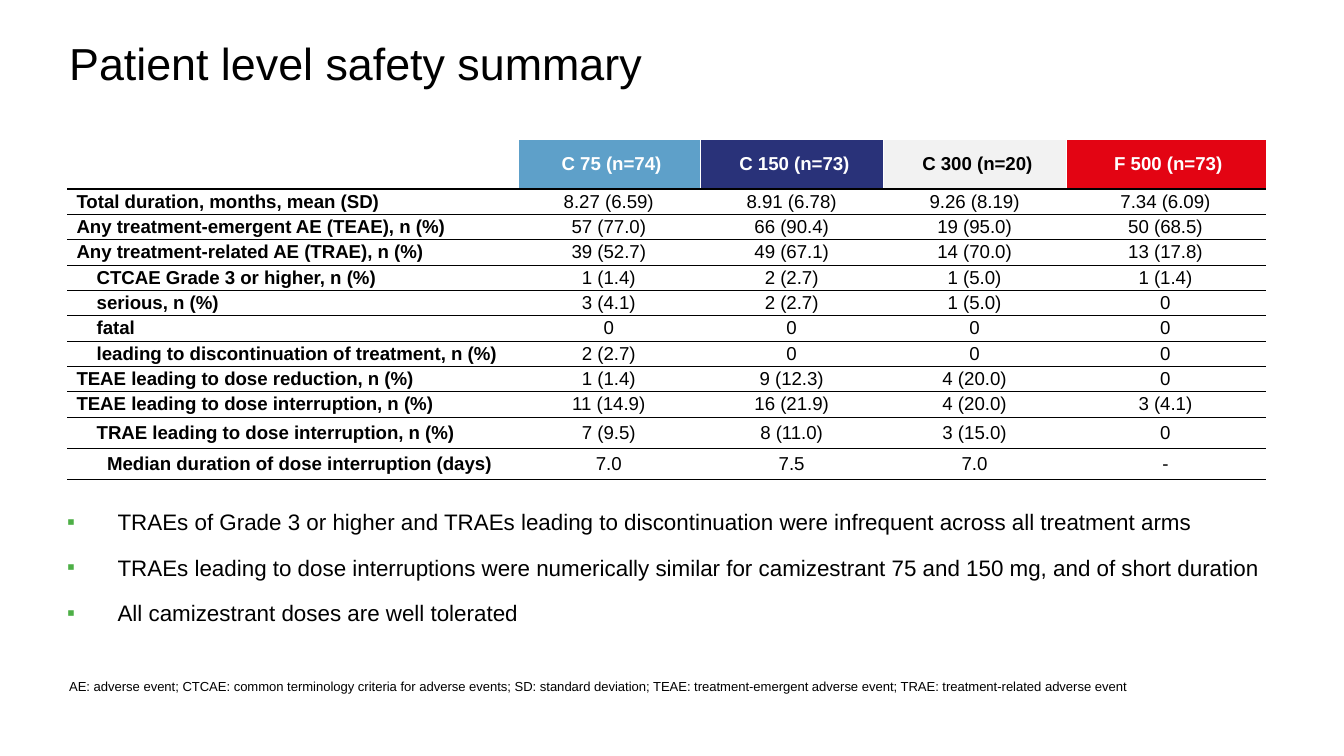
from dataclasses import dataclass

from lxml import etree
from pptx import Presentation
from pptx.dml.color import RGBColor
from pptx.enum.text import MSO_ANCHOR, PP_ALIGN
from pptx.oxml.ns import qn
from pptx.util import Pt

TOP, MIDDLE, BOTTOM = MSO_ANCHOR.TOP, MSO_ANCHOR.MIDDLE, MSO_ANCHOR.BOTTOM
LEFT, CENTER = PP_ALIGN.LEFT, PP_ALIGN.CENTER
NO_GRID_STYLE = "{2D5ABB26-0587-4C30-8999-92F81FD0307C}"


@dataclass(frozen=True)
class Theme:
    font: str = "Arial"
    black: str = "000000"
    white: str = "FFFFFF"
    bullet: str = "4DAF46"
    arm_75: str = "5EA0C9"
    arm_150: str = "293279"
    arm_300: str = "F2F2F2"
    arm_500: str = "E30413"
    title: float = 24
    body: float = 12
    table: float = 10
    footnote: float = 7
    hairline: float = 0.5
    divider: float = 0.75
    header_rule: float = 1


THEME = Theme()

ARMS = [
    ("C 75 (n=74)", THEME.arm_75, THEME.white),
    ("C 150 (n=73)", THEME.arm_150, THEME.white),
    ("C 300 (n=20)", THEME.arm_300, THEME.black),
    ("F 500 (n=73)", THEME.arm_500, THEME.white),
]
LABEL_INSETS = (5, 15.8, 21.4)
SAFETY_ROWS = [
    (0, "Total duration, months, mean (SD)", "8.27 (6.59)", "8.91 (6.78)", "9.26 (8.19)", "7.34 (6.09)"),
    (0, "Any treatment-emergent AE (TEAE), n (%)", "57 (77.0)", "66 (90.4)", "19 (95.0)", "50 (68.5)"),
    (0, "Any treatment-related AE (TRAE), n (%)", "39 (52.7)", "49 (67.1)", "14 (70.0)", "13 (17.8)"),
    (1, "CTCAE Grade 3 or higher, n (%)", "1 (1.4)", "2 (2.7)", "1 (5.0)", "1 (1.4)"),
    (1, "serious, n (%)", "3 (4.1)", "2 (2.7)", "1 (5.0)", "0"),
    (1, "fatal", "0", "0", "0", "0"),
    (1, "leading to discontinuation of treatment, n (%)", "2 (2.7)", "0", "0", "0"),
    (0, "TEAE leading to dose reduction, n (%)", "1 (1.4)", "9 (12.3)", "4 (20.0)", "0"),
    (0, "TEAE leading to dose interruption, n (%)", "11 (14.9)", "16 (21.9)", "4 (20.0)", "3 (4.1)"),
    (1, "TRAE leading to dose interruption, n (%)", "7 (9.5)", "8 (11.0)", "3 (15.0)", "0"),
    (2, "Median duration of dose interruption (days)", "7.0", "7.5", "7.0", "-"),
]
COL_WIDTHS = [241.5, 98, 98, 98, 106.5]
ROW_HEIGHTS = [26.25] + [13.6] * 9 + [16.8] * 2

FINDINGS = [
    "TRAEs of Grade 3 or higher and TRAEs leading to discontinuation were infrequent across all treatment arms",
    "TRAEs leading to dose interruptions were numerically similar for camizestrant 75 and 150 mg, "
    "and of short duration",
    "All camizestrant doses are well tolerated",
]
ABBREVIATIONS = (
    "AE: adverse event; CTCAE: common terminology criteria for adverse events; SD: standard deviation; "
    "TEAE: treatment-emergent adverse event; TRAE: treatment-related adverse event"
)


class SlideBuilder:
    def __init__(self, slide, theme):
        self.s = slide
        self.theme = theme

    def run(self, p, text, size, color, bold=False):
        r = p.add_run()
        r.text = text
        r.font.name = self.theme.font
        r.font.size = Pt(size)
        r.font.bold = bold
        r.font.color.rgb = RGBColor.from_string(color)

    def box(self, x, y, w, h, anchor, inset_x, inset_y):
        tf = self.s.shapes.add_textbox(Pt(x), Pt(y), Pt(w), Pt(h)).text_frame
        tf.word_wrap = True
        tf.vertical_anchor = anchor
        tf.margin_left = tf.margin_right = Pt(inset_x)
        tf.margin_top = tf.margin_bottom = Pt(inset_y)
        return tf

    def text(self, text, x, y, w, h, size, anchor=TOP, inset_y=3):
        tf = self.box(x, y, w, h, anchor, 7.2, inset_y)
        self.run(tf.paragraphs[0], text, size, self.theme.black)

    def bullets(self, items, x, y, w, h, indent, gap):
        tf = self.box(x, y, w, h, MIDDLE, 0, 0)
        for i, item in enumerate(items):
            p = tf.add_paragraph() if i else tf.paragraphs[0]
            pPr = p._p.get_or_add_pPr()
            pPr.set("marL", str(Pt(indent)))
            pPr.set("indent", str(-Pt(indent)))
            color = etree.SubElement(pPr, qn("a:buClr"))
            etree.SubElement(color, qn("a:srgbClr"), val=self.theme.bullet)
            etree.SubElement(pPr, qn("a:buFont"), typeface=self.theme.font)
            etree.SubElement(pPr, qn("a:buChar"), char="▪")
            if i:
                p.space_before = Pt(gap)
            self.run(p, item, self.theme.body, self.theme.black)

    def borders(self, cell, edges):
        tcPr = cell._tc.get_or_add_tcPr()
        for side, (color, width) in edges.items():
            ln = etree.SubElement(tcPr, qn(f"a:ln{side}"), w=str(Pt(width)))
            fill = etree.SubElement(ln, qn("a:solidFill"))
            etree.SubElement(fill, qn("a:srgbClr"), val=color)

    def cell_edges(self, row, col):
        t = self.theme
        edges = {}
        if col > 0:
            edges["L"] = (t.white, t.divider)
        if col < len(COL_WIDTHS) - 1:
            edges["R"] = (t.white, t.divider)
        if row > 0:
            edges["T"] = (t.black, t.header_rule if row == 1 else t.hairline)
        edges["B"] = (t.black, t.hairline if row else t.header_rule)
        return edges

    def cell(self, cell, text, color, bold, align, left, right, fill=None):
        cell.vertical_anchor = MIDDLE
        cell.margin_left, cell.margin_right = Pt(left), Pt(right)
        cell.margin_top = cell.margin_bottom = 0
        if fill:
            cell.fill.solid()
            cell.fill.fore_color.rgb = RGBColor.from_string(fill)
        else:
            cell.fill.background()
        if text:
            p = cell.text_frame.paragraphs[0]
            p.alignment = align
            self.run(p, text, self.theme.table, color, bold)

    def safety_table(self, x, y):
        t = self.theme
        frame = self.s.shapes.add_table(
            len(ROW_HEIGHTS), len(COL_WIDTHS), Pt(x), Pt(y), Pt(sum(COL_WIDTHS)), Pt(sum(ROW_HEIGHTS))
        )
        table = frame.table
        table.horz_banding = False
        table._tbl.tblPr.find(qn("a:tableStyleId")).text = NO_GRID_STYLE
        for column, width in zip(table.columns, COL_WIDTHS):
            column.width = Pt(width)
        for i, height in enumerate(ROW_HEIGHTS):
            table.rows[i].height = Pt(height)
            for j in range(len(COL_WIDTHS)):
                self.borders(table.cell(i, j), self.cell_edges(i, j))

        self.cell(table.cell(0, 0), "", t.black, True, LEFT, 5, 5)
        for j, (name, fill, color) in enumerate(ARMS, 1):
            self.cell(table.cell(0, j), name, color, True, CENTER, 5.8, 3.6, fill)
        for i, (level, label, *values) in enumerate(SAFETY_ROWS, 1):
            self.cell(table.cell(i, 0), label, t.black, True, LEFT, LABEL_INSETS[level], 5.8)
            for j, value in enumerate(values, 1):
                self.cell(table.cell(i, j), value, t.black, False, CENTER, 5, 5.8)


def main():
    prs = Presentation()
    prs.slide_width, prs.slide_height = Pt(720), Pt(405)
    b = SlideBuilder(prs.slides.add_slide(prs.slide_layouts[6]), THEME)
    b.text("Patient level safety summary", 30, 3.6, 457, 48, THEME.title, BOTTOM, 3.6)
    b.bullets(FINDINGS, 36, 265.7, 664, 76.3, indent=27, gap=9.8)
    b.text(ABBREVIATIONS, 30, 360.7, 648, 14.4, THEME.footnote)
    b.safety_table(36, 75)
    prs.save("out.pptx")


if __name__ == "__main__":
    main()
